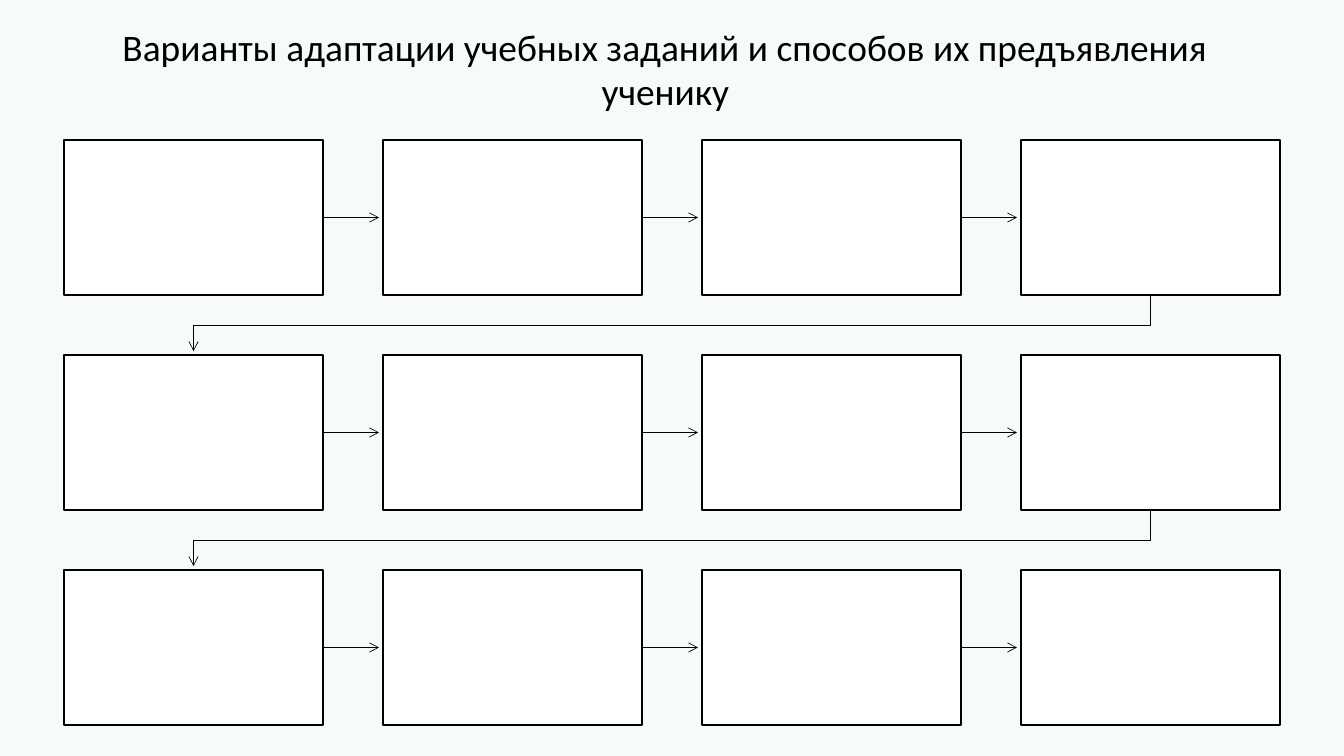
from lxml import etree
from pptx import Presentation
from pptx import util as u
from pptx.dml.color import RGBColor
from pptx.enum import shapes, text
from pptx.oxml.ns import qn

SCALE = 914400 / 100.8
LEFT, TOP = 64, 140
WIDE, HIGH = 259, 155
STEP_X, STEP_Y = 319, 215
ROWS, COLS = 3, 4
GAP = 4
INK, PAPER, BACK = "000000", "FFFFFF", "F7FBF7"


def px(n):
    """Turn pixels into EMU."""
    return u.Emu(round(n * SCALE))


def paint(color, code):
    """Set a colour from a hex string."""
    color.rgb = RGBColor.from_string(code)


def fill(area, code):
    """Give an area a solid colour."""
    area.solid()
    paint(area.fore_color, code)


def tip(line):
    """Style a thin line that ends in an open arrowhead."""
    paint(line.line.color, INK)
    line.line.width = u.Pt(0.5)
    pen = line.line._get_or_add_ln()
    etree.SubElement(pen, qn("a:tailEnd"), type="arrow")


def add_title(slide, words):
    """Place the slide title."""
    title = slide.shapes.title
    title.left, title.top, title.width, title.height = map(px, (69, 18, 1193, 101))
    frame = title.text_frame
    frame.text = words
    frame.word_wrap = True
    frame.auto_size = text.MSO_AUTO_SIZE.NONE
    frame.vertical_anchor = text.MSO_ANCHOR.MIDDLE
    para = frame.paragraphs[0]
    para.alignment = text.PP_ALIGN.CENTER
    font = para.runs[0].font
    font.name, font.size = "Calibri", u.Pt(26.7)
    paint(font.color, INK)


def add_box(slide, row, col):
    """Add one empty step box of the grid."""
    box = slide.shapes.add_shape(
        shapes.MSO_SHAPE.RECTANGLE,
        px(LEFT + col * STEP_X), px(TOP + row * STEP_Y), px(WIDE), px(HIGH))
    box.shadow.inherit = False
    fill(box.fill, PAPER)
    paint(box.line.color, INK)
    box.line.width = u.Pt(1)
    return box


def add_arrow(slide, box, row, col):
    """Lead from a box to just before the next one in its row."""
    mid = px(TOP + row * STEP_Y + HIGH / 2)
    start = LEFT + col * STEP_X + WIDE
    end = LEFT + (col + 1) * STEP_X - GAP
    arrow = slide.shapes.add_connector(
        shapes.MSO_CONNECTOR.STRAIGHT, px(start), mid, px(end), mid)
    arrow.begin_connect(box, 3)
    etree.SubElement(arrow._element.spPr, qn("a:effectLst"))
    tip(arrow)


def add_turn(slide, row):
    """Lead from the last box of a row down to the first of the next."""
    first = LEFT + WIDE / 2
    last = first + (COLS - 1) * STEP_X
    start = TOP + row * STEP_Y + HIGH
    end = TOP + (row + 1) * STEP_Y
    bend = (start + end) / 2
    path = slide.shapes.build_freeform(px(last), px(start))
    points = [(last, bend), (first, bend), (first, end - GAP)]
    path.add_line_segments([(px(x), px(y)) for x, y in points], close=False)
    turn = path.convert_to_shape()
    turn.shadow.inherit = False
    turn.fill.background()
    tip(turn)


def main():
    """Build the slide and save it."""
    deck = Presentation()
    deck.slide_width, deck.slide_height = px(1344), px(756)
    slide = deck.slides.add_slide(deck.slide_layouts[5])
    fill(slide.background.fill, BACK)
    add_title(slide, "Варианты адаптации учебных заданий и способов их предъявления ученику")
    for row in range(ROWS):
        for col in range(COLS):
            box = add_box(slide, row, col)
            if col < COLS - 1:
                add_arrow(slide, box, row, col)
        if row < ROWS - 1:
            add_turn(slide, row)
    deck.save("out.pptx")


if __name__ == "__main__":
    main()
